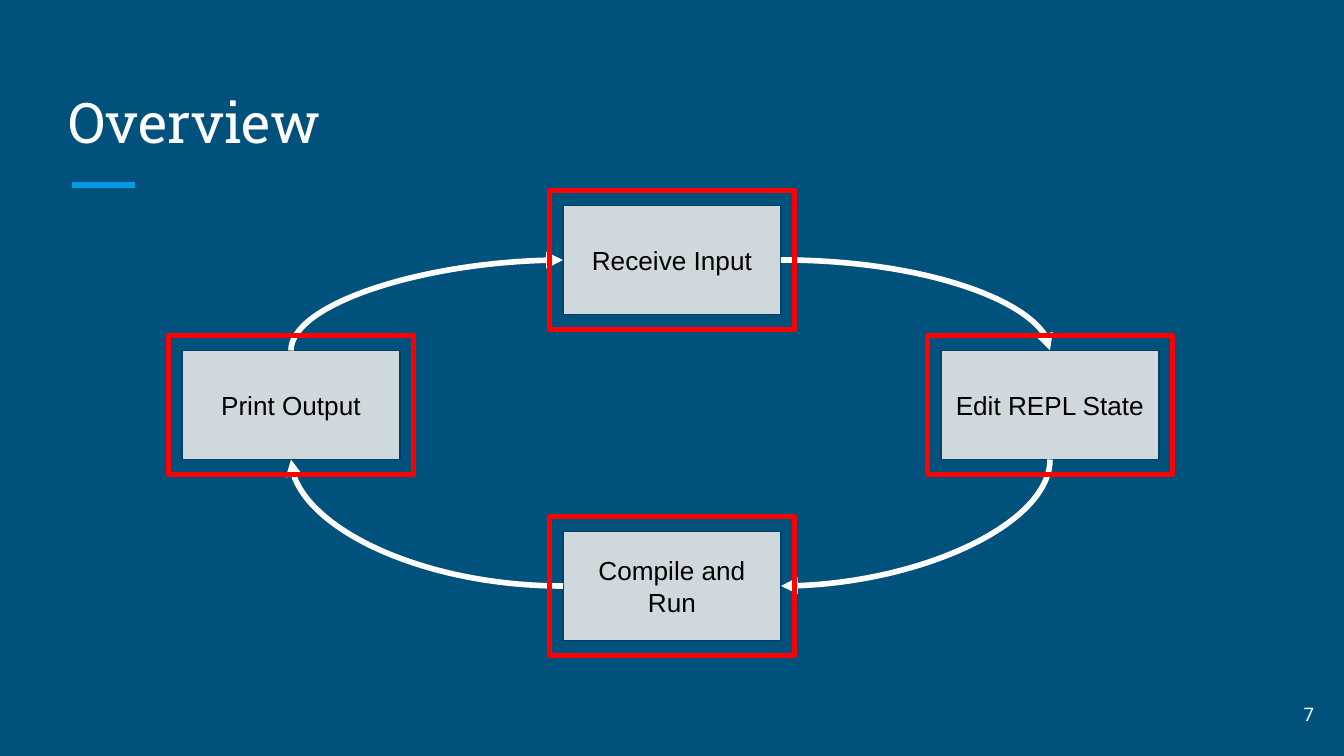
from lxml import etree
from pptx import Presentation
from pptx.dml.color import RGBColor
from pptx.enum.shapes import MSO_CONNECTOR as CONN, MSO_SHAPE as SHAPE
from pptx.enum.text import MSO_ANCHOR as ANCHOR, MSO_AUTO_SIZE as AUTO, PP_ALIGN as ALIGN
from pptx.oxml.ns import qn
from pptx.util import Pt

EMU_PER_PX = 9144000 / 1344
NAVY = RGBColor(0x00, 0x51, 0x7C)
EDGE = RGBColor(0x00, 0x40, 0x65)
GREY = RGBColor(0xCF, 0xD8, 0xDC)
SKY = RGBColor(0x03, 0x9B, 0xE5)
RED = RGBColor(0xFF, 0x00, 0x00)
WHITE = RGBColor(0xFF, 0xFF, 0xFF)
BLACK = RGBColor(0x00, 0x00, 0x00)

STEP_W, STEP_H = 218, 109
FRAME_W, FRAME_H = 245, 139
STEPS = [
    ("Receive Input", 672, 260),
    ("Edit REPL State", 1050, 405),
    ("Compile and Run", 672, 586),
    ("Print Output", 291, 405),
]


def px(n):
    return round(n * EMU_PER_PX)


def set_text(sp, text, font, size, color, align, anchor):
    tf = sp.text_frame
    tf.word_wrap = True
    tf.auto_size = AUTO.NONE
    tf.vertical_anchor = anchor
    tf.margin_left = tf.margin_right = tf.margin_top = tf.margin_bottom = px(13)
    p = tf.paragraphs[0]
    p.text = text
    p.alignment = align
    p.font.name = font
    p.font.size = Pt(size)
    p.font.color.rgb = color


def add_title(slide, text):
    sp = slide.shapes.title
    sp.left, sp.top, sp.width, sp.height = px(56), px(67), px(1230), px(101)
    set_text(sp, text, "Roboto Slab", 30, WHITE, ALIGN.LEFT, ANCHOR.BOTTOM)


def add_rect(slide, cx, cy, w, h, line, weight):
    sp = slide.shapes.add_shape(SHAPE.RECTANGLE, px(cx - w / 2), px(cy - h / 2), px(w), px(h))
    sp.shadow.inherit = False
    sp.fill.background()
    sp.line.color.rgb = line
    sp.line.width = Pt(weight)
    return sp


def add_step(slide, text, cx, cy):
    sp = add_rect(slide, cx, cy, STEP_W, STEP_H, EDGE, 0.75)
    sp.fill.solid()
    sp.fill.fore_color.rgb = GREY
    set_text(sp, text, "Arial", 14, BLACK, ALIGN.CENTER, ANCHOR.MIDDLE)


def add_line(slide, kind, x1, y1, x2, y2, color):
    c = slide.shapes.add_connector(kind, px(x1), px(y1), px(x2), px(y2))
    c.line.color.rgb = color
    c.line.width = Pt(3)
    etree.SubElement(c._element.spPr, qn("a:effectLst"))
    return c


def add_curved_arrow(slide, start, end, quarter_turns):
    (x1, y1), (x2, y2) = start, end
    w, h = abs(x2 - x1), abs(y2 - y1)
    if quarter_turns % 2:
        w, h = h, w
    left, top = (x1 + x2 - w) / 2, (y1 + y2 - h) / 2
    c = add_line(slide, CONN.CURVE, left, top, left + w, top + h, WHITE)
    spPr = c._element.spPr
    spPr.find(qn("a:xfrm")).set("rot", str(quarter_turns * 90 * 60000))
    spPr.find(qn("a:prstGeom")).set("prst", "curvedConnector2")
    etree.SubElement(spPr.find(qn("a:ln")), qn("a:tailEnd"), type="triangle")


def add_cycle(slide):
    for text, cx, cy in STEPS:
        add_step(slide, text, cx, cy)
    sides = [(STEP_W / 2, 0), (0, STEP_H / 2), (-STEP_W / 2, 0), (0, -STEP_H / 2)]
    for i, (dx, dy) in enumerate(sides):
        _, x1, y1 = STEPS[i]
        _, x2, y2 = STEPS[(i + 1) % len(STEPS)]
        end_dx, end_dy = sides[i - 1]
        add_curved_arrow(slide, (x1 + dx, y1 + dy), (x2 + end_dx, y2 + end_dy), i)


def add_page_number(slide, text):
    sp = slide.shapes.add_textbox(px(1246), px(685), px(81), px(58))
    set_text(sp, text, "Roboto", 10, WHITE, ALIGN.RIGHT, ANCHOR.MIDDLE)


def main():
    prs = Presentation()
    prs.slide_width, prs.slide_height = px(1344), px(756)
    slide = prs.slides.add_slide(prs.slide_layouts[5])
    slide.background.fill.solid()
    slide.background.fill.fore_color.rgb = NAVY
    add_line(slide, CONN.STRAIGHT, 72, 185, 135, 185, SKY)
    add_title(slide, "Overview")
    add_cycle(slide)
    add_page_number(slide, "7")
    for _, cx, cy in STEPS:
        add_rect(slide, cx, cy, FRAME_W, FRAME_H, RED, 3)
    prs.save("out.pptx")


if __name__ == "__main__":
    main()
